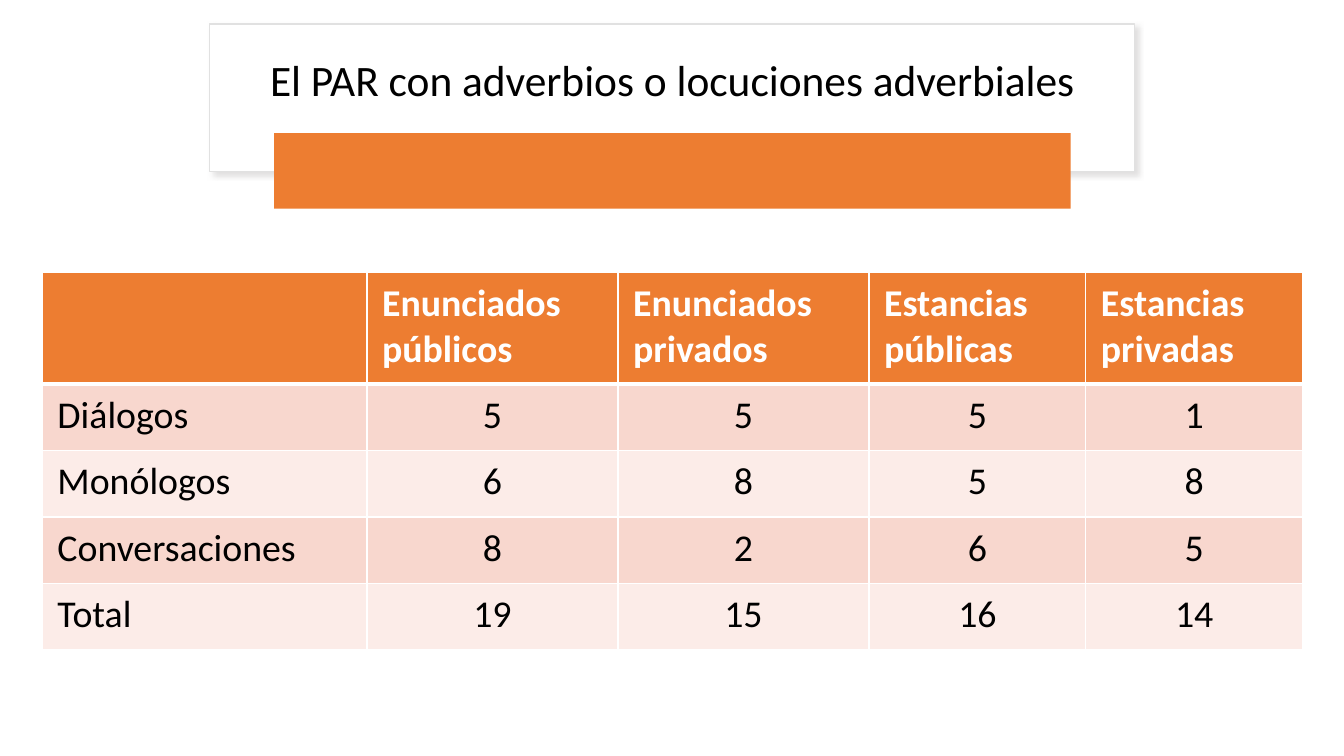
from dataclasses import dataclass

from lxml.etree import SubElement
from pptx import Presentation
from pptx.dml.color import RGBColor
from pptx.enum.shapes import MSO_SHAPE
from pptx.enum.text import MSO_ANCHOR, PP_ALIGN
from pptx.oxml.ns import qn
from pptx.util import Inches, Pt

FONT = "Calibri"
ORANGE = "ED7D31"
WHITE = "FFFFFF"
BLACK = "000000"
BANDS = ("F8D7CE", "FCECE8")


@dataclass
class Box:
    left: float
    top: float
    width: float
    height: float

    def lengths(self) -> tuple:
        return tuple(Inches(side) for side in (self.left, self.top, self.width, self.height))


@dataclass
class TableRow:
    height: float
    texts: tuple


COLUMN_WIDTHS = (3.22, 2.49, 2.49, 2.15, 2.15)
ROWS = (
    TableRow(1.11, ("", "Enunciados públicos", "Enunciados privados",
                    "Estancias públicas", "Estancias privadas")),
    TableRow(0.66, ("Diálogos", "5", "5", "5", "1")),
    TableRow(0.66, ("Monólogos", "6", "8", "5", "8")),
    TableRow(0.66, ("Conversaciones", "8", "2", "6", "5")),
    TableRow(0.66, ("Total", "19", "15", "16", "14")),
)


def color(value: str) -> RGBColor:
    return RGBColor.from_string(value)


def paint(item, value: str) -> None:
    item.fill.solid()
    item.fill.fore_color.rgb = color(value)


def set_font(para, size: float, value: str, bold: bool = False) -> None:
    para.font.name = FONT
    para.font.size = Pt(size)
    para.font.bold = bold
    para.font.color.rgb = color(value)


def add_block(page, kind: MSO_SHAPE, box: Box, fill: str):
    block = page.shapes.add_shape(kind, *box.lengths())
    block.shadow.inherit = False
    paint(block, fill)
    block.line.fill.background()
    return block


def add_shadow(shape) -> None:
    effects = shape.element.spPr.find(qn("a:effectLst"))
    shadow = SubElement(effects, qn("a:outerShdw"), blurRad=str(Pt(4)), dist=str(Pt(3)),
                        dir=str(45 * 60000), algn="tl", rotWithShape="0")
    tint = SubElement(shadow, qn("a:srgbClr"), val="C5C3C3")
    SubElement(tint, qn("a:alpha"), val="50000")


def add_borders(cell, top: float, bottom: float) -> None:
    properties = cell._tc.get_or_add_tcPr()
    for side, width in (("L", 1), ("R", 1), ("T", top), ("B", bottom)):
        border = SubElement(properties, qn(f"a:ln{side}"), w=str(Pt(width)))
        fill = SubElement(border, qn("a:solidFill"))
        SubElement(fill, qn("a:srgbClr"), val=WHITE)


def add_heading(page) -> None:
    panel = add_block(page, MSO_SHAPE.RECTANGLE, Box(2.08, 0.24, 9.17, 1.46), WHITE)
    panel.line.color.rgb = color("E1E1E1")
    panel.line.width = Pt(1)
    add_shadow(panel)

    title = page.shapes.title
    title.left, title.top, title.width, title.height = Box(2.3, 0.34, 8.73, 0.95).lengths()
    title.element.addprevious(panel.element)
    title.text_frame.text = "El PAR con adverbios o locuciones adverbiales"
    title.text_frame.vertical_anchor = MSO_ANCHOR.MIDDLE
    para = title.text_frame.paragraphs[0]
    para.alignment = PP_ALIGN.CENTER
    para.line_spacing = 0.9
    set_font(para, 31, BLACK)

    bar = add_block(page, MSO_SHAPE.ROUNDED_RECTANGLE, Box(2.72, 1.32, 7.9, 0.75), ORANGE)
    bar.adjustments[0] = 0


def add_counts(page) -> None:
    box = Box(0.42, 2.7, sum(COLUMN_WIDTHS), sum(row.height for row in ROWS))
    table = page.shapes.add_table(len(ROWS), len(COLUMN_WIDTHS), *box.lengths()).table
    for column, width in zip(table.columns, COLUMN_WIDTHS):
        column.width = Inches(width)
    for row_index, row in enumerate(ROWS):
        table.rows[row_index].height = Inches(row.height)
        header = row_index == 0
        for column_index, text in enumerate(row.texts):
            cell = table.cell(row_index, column_index)
            add_borders(cell, 3 if row_index == 1 else 1, 3 if header else 1)
            paint(cell, ORANGE if header else BANDS[(row_index - 1) % 2])
            cell.margin_left = cell.margin_right = Inches(0.15)
            cell.margin_top = cell.margin_bottom = Inches(0.08)
            cell.text = text
            para = cell.text_frame.paragraphs[0]
            centred = not header and column_index > 0
            para.alignment = PP_ALIGN.CENTER if centred else PP_ALIGN.LEFT
            set_font(para, 27, WHITE if header else BLACK, header)


def main() -> None:
    deck = Presentation()
    deck.slide_width = Inches(13.33)
    deck.slide_height = Inches(7.5)
    page = deck.slides.add_slide(deck.slide_layouts.get_by_name("Title Only"))
    add_heading(page)
    add_counts(page)
    deck.save("out.pptx")


if __name__ == "__main__":
    main()
